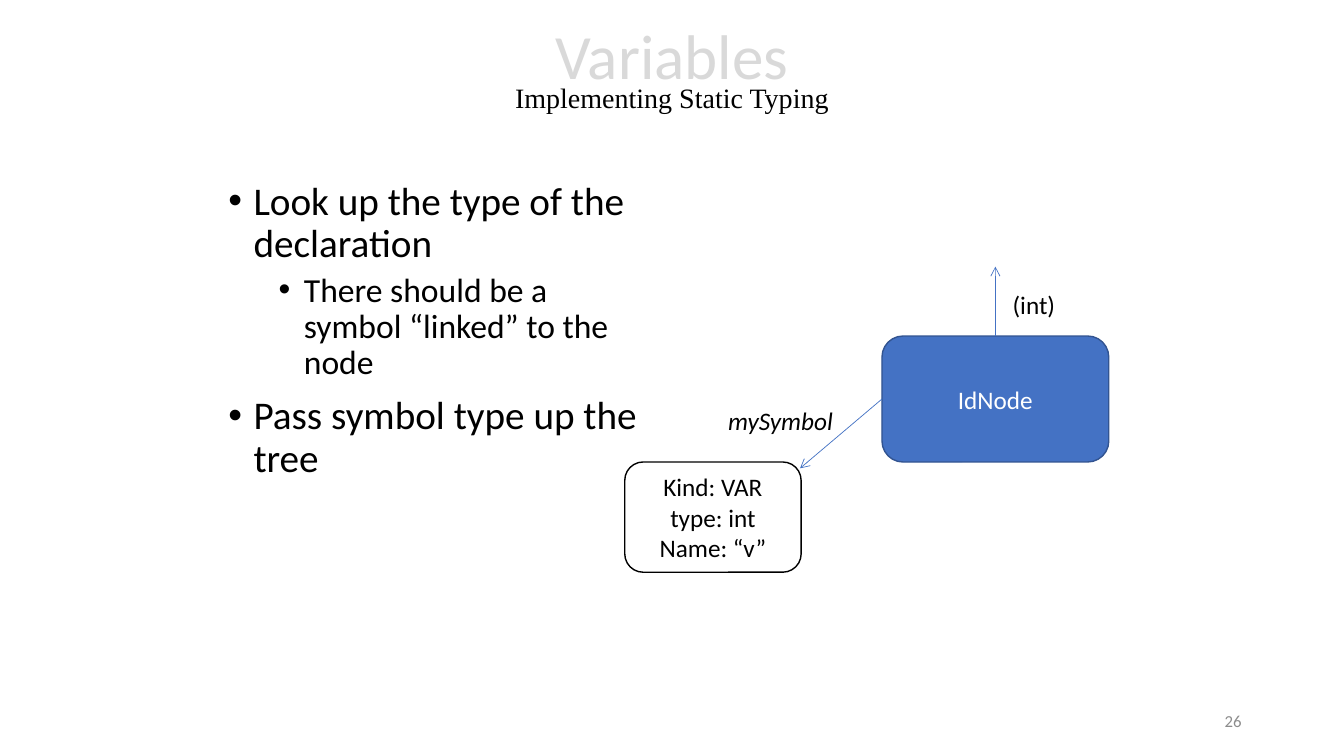
from lxml import etree
from pptx import Presentation
from pptx.dml.color import RGBColor
from pptx.enum.shapes import MSO_CONNECTOR, MSO_SHAPE
from pptx.enum.text import MSO_ANCHOR, PP_ALIGN
from pptx.oxml.ns import qn
from pptx.util import Emu, Pt

ROUND, STRAIGHT = MSO_SHAPE.ROUNDED_RECTANGLE, MSO_CONNECTOR.STRAIGHT
TOP, MIDDLE = MSO_ANCHOR.TOP, MSO_ANCHOR.MIDDLE
LEFT, CENTER, RIGHT = PP_ALIGN.LEFT, PP_ALIGN.CENTER, PP_ALIGN.RIGHT
SANS, SERIF = "Calibri", "Times New Roman"
BLACK, WHITE, BLUE = "000000", "FFFFFF", "4472C4"
TOP_SIDE, LEFT_SIDE = 0, 1

# Content: boxes are left, top, width, height in px
TITLE_BOX, BODY_BOX = (226, 2, 828, 139), (208, 168, 416, 475)
TITLE, SUBTITLE = "Variables", "Implementing Static Typing"
BULLETS = [  # level, text
    (0, "Look up the type of the declaration"),
    (1, "There should be a symbol “linked” to the node"),
    (0, "Pass symbol type up the tree"),
]
LEVELS = [(24, 28, 10), (72, 24, 5)]  # indent px, size, space before
HANG = 24
NODE = ((840, 320, 216, 120), ["IdNode"], BLUE, "325491", WHITE)
SYMBOL = ((595, 440, 168, 105), ["Kind: VAR", "type: int", "Name: “v”"],
          WHITE, BLACK, BLACK)
ARROWS = [(LEFT_SIDE, (762, 446)), (TOP_SIDE, (948, 254))]  # node side, tip
LABELS = [  # box, text, italic
    ((684, 381, 120, 38), "mySymbol", True),
    ((955, 271, 60, 38), "(int)", False),
]
NUMBER_BOX, NUMBER = (904, 667, 288, 38), "26"


def px(n):
    return Emu(n * 9525)


def rgb(color):
    return RGBColor.from_string(color)


def add_run(p, text, size, color=BLACK, font=SANS, italic=False):
    r = p.add_run()
    r.text = text
    r.font.size, r.font.name, r.font.italic = Pt(size), font, italic
    r.font.color.rgb = rgb(color)


def add_text(box, anchor=TOP, wrap=True):
    tf = s.shapes.add_textbox(*map(px, box)).text_frame
    tf.word_wrap, tf.vertical_anchor = wrap, anchor
    return tf


def add_paragraph(tf, first, align=LEFT):
    p = tf.paragraphs[0] if first else tf.add_paragraph()
    p.alignment = align
    return p


def add_box(box, lines, fill, line, color):
    sp = s.shapes.add_shape(ROUND, *map(px, box))
    sp.shadow.inherit = False
    sp.fill.solid()
    sp.fill.fore_color.rgb = rgb(fill)
    sp.line.color.rgb, sp.line.width = rgb(line), Pt(1)
    tf = sp.text_frame
    tf.word_wrap, tf.vertical_anchor = True, MIDDLE
    for i, text in enumerate(lines):
        add_run(add_paragraph(tf, i == 0, CENTER), text, 18, color)
    return sp


prs = Presentation()
prs.slide_width, prs.slide_height = px(1280), px(720)
s = prs.slides.add_slide(prs.slide_layouts[6])

# Title
p = add_paragraph(add_text(TITLE_BOX, MIDDLE), True, CENTER)
p.line_spacing = 0.7
add_run(p, TITLE, 45, "D9D9D9")
p.add_line_break()
add_run(p, SUBTITLE, 20, font=SERIF)

# Bullets
tf = add_text(BODY_BOX)
for i, (level, text) in enumerate(BULLETS):
    indent, size, before = LEVELS[level]
    p = add_paragraph(tf, i == 0)
    p.level, p.line_spacing, p.space_before = level, 0.9, Pt(before)
    pPr = p._p.get_or_add_pPr()
    pPr.set("marL", str(px(indent)))
    pPr.set("indent", str(px(-HANG)))
    etree.SubElement(pPr, qn("a:buFont"), typeface="Arial")
    etree.SubElement(pPr, qn("a:buChar"), char="•")
    add_run(p, text, size)

# Slide number
p = add_paragraph(add_text(NUMBER_BOX, MIDDLE), True, RIGHT)
add_run(p, NUMBER, 12, "8C8C8C")

# Node, arrows and symbol entry
node = add_box(*NODE)
for side, tip in ARROWS:
    arrow = s.shapes.add_connector(STRAIGHT, 0, 0, *map(px, tip))
    arrow.begin_connect(node, side)
    arrow.line.color.rgb, arrow.line.width = rgb(BLUE), Pt(0.5)
    etree.SubElement(arrow.line._get_or_add_ln(), qn("a:tailEnd"), type="arrow")
    etree.SubElement(arrow._element.spPr, qn("a:effectLst"))
add_box(*SYMBOL)

# Arrow labels
for box, text, italic in LABELS:
    p = add_paragraph(add_text(box, wrap=False), True)
    add_run(p, text, 18, italic=italic)

prs.save("out.pptx")
